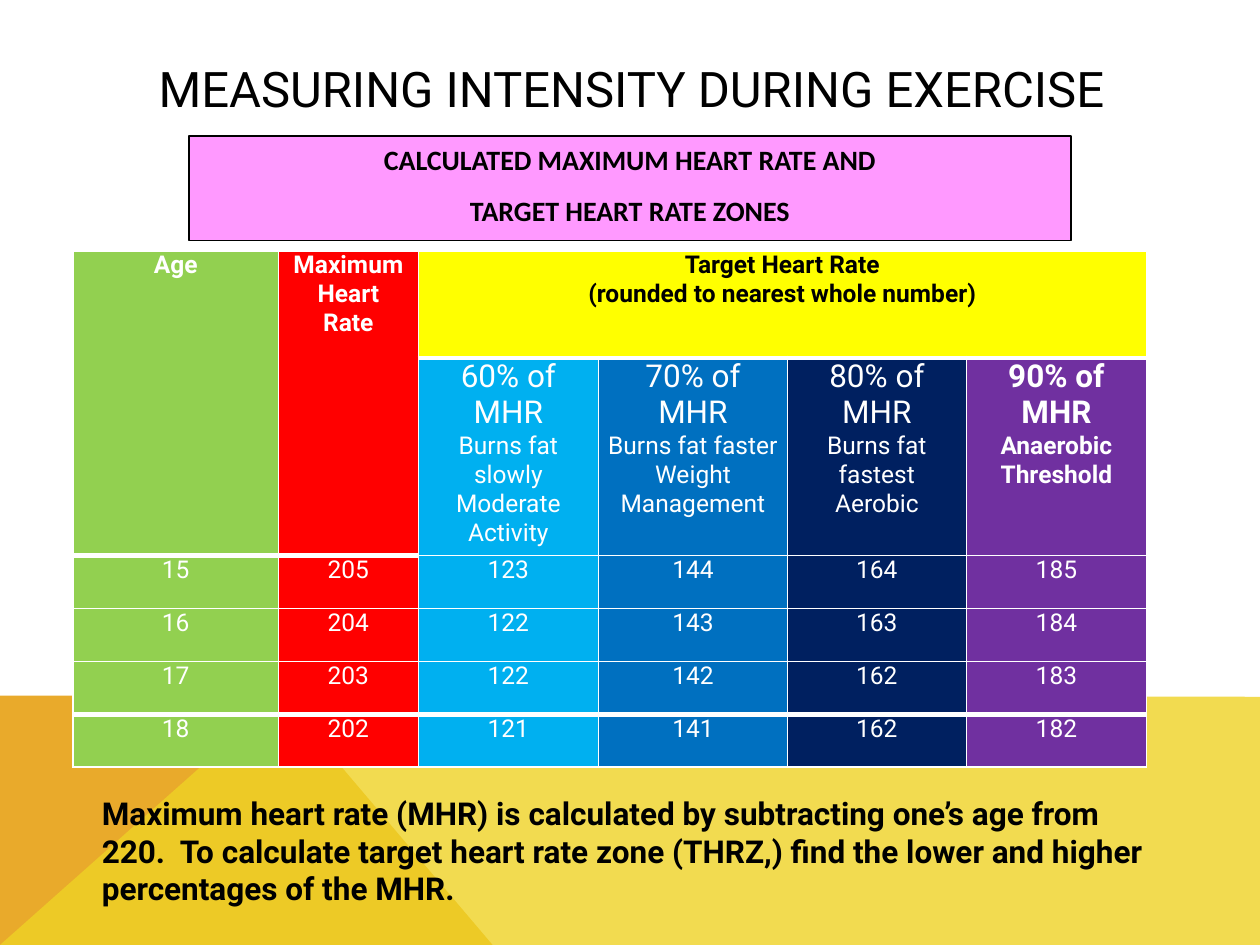
from lxml import etree
from pptx import Presentation
from pptx.dml.color import RGBColor
from pptx.enum import shapes, text
from pptx.oxml import ns
from pptx.util import Inches, Pt

COLORS = {
    "black": "000000", "white": "FFFFFF", "pink": "FF99FF", "orange": "E9AA2B", "gold": "EFD225",
    "green": "92D050", "red": "FF0000", "yellow": "FFFF00", "sky": "00B0F0",
    "blue": "0070C0", "navy": "002060", "purple": "7030A0",
}
CENTER = text.PP_ALIGN.CENTER

COLUMN_COLORS = ["green", "red", "sky", "blue", "navy", "purple"]
COLUMN_WIDTHS = [1.63, 1.11, 1.43, 1.5, 1.42, 1.43]
ROW_HEIGHTS = [0.85, 1.57] + [0.42] * 4
ZONES = [
    ["60% of MHR", "Burns fat slowly Moderate Activity"],
    ["70% of MHR", "Burns fat faster", "Weight Management"],
    ["80% of MHR", "Burns fat fastest", "Aerobic"],
    ["90% of MHR", "Anaerobic", "Threshold"],
]
HEART_RATES = [
    [15, 205, 123, 144, 164, 185],
    [16, 204, 122, 143, 163, 184],
    [17, 203, 122, 142, 162, 183],
    [18, 202, 121, 141, 162, 182],
]


def rgb(name):
    return RGBColor.from_string(COLORS[name])


def has_heavy_bottom(row, column):
    """Tell whether the thick rule runs below this cell."""
    return row == 4 or (row == 0 and column >= 2) or (row == 1 and column < 2)


class SlideBuilder:
    def __init__(self, deck, font="Roboto"):
        self.page = deck.slides.add_slide(deck.slide_layouts[5])
        self.font = font

    def add_lines(self, frame, lines, sizes, color="black", bold=False, align=None, font=None,
                  after=0):
        """Fill a text frame; the last size also serves all further lines."""
        frame.word_wrap = True
        for index, line in enumerate(lines):
            para = frame.add_paragraph() if index else frame.paragraphs[0]
            para.alignment = align
            para.space_before, para.space_after = Pt(0), Pt(after)
            span = para.add_run()
            span.text = line
            span.font.name = font or self.font
            span.font.size = Pt(sizes[min(index, len(sizes) - 1)])
            span.font.bold = bold
            span.font.color.rgb = rgb(color)

    def title(self, line, place):
        box = self.page.shapes.title
        box.left, box.top, box.width, box.height = map(Inches, place)
        box.text_frame.vertical_anchor = text.MSO_ANCHOR.MIDDLE
        self.add_lines(box.text_frame, [line], [28], align=CENTER)

    def polygon(self, points, color, opacity=None):
        corners = [(Inches(x), Inches(y)) for x, y in points]
        builder = self.page.shapes.build_freeform(*corners[0])
        builder.add_line_segments(corners[1:], close=True)
        shape = builder.convert_to_shape()
        shape.shadow.inherit = False
        shape.fill.solid()
        shape.fill.fore_color.rgb = rgb(color)
        shape.line.fill.background()
        if opacity is not None:
            tint = shape.element.spPr.find(".//" + ns.qn("a:srgbClr"))
            etree.SubElement(tint, ns.qn("a:alpha"), val=str(opacity * 1000))

    def banner(self, lines, place, color):
        box = self.page.shapes.add_shape(shapes.MSO_SHAPE.RECTANGLE, *map(Inches, place))
        box.shadow.inherit = False
        box.fill.solid()
        box.fill.fore_color.rgb = rgb(color)
        box.line.color.rgb = rgb("black")
        box.line.width = Pt(0.75)
        box.text_frame.vertical_anchor = text.MSO_ANCHOR.TOP
        self.add_lines(box.text_frame, lines, [16], bold=True, align=CENTER, font="Calibri",
                       after=10)

    def note(self, line, place):
        box = self.page.shapes.add_textbox(*map(Inches, place))
        self.add_lines(box.text_frame, [line], [18], bold=True)

    def table(self, place, widths, heights):
        frame = self.page.shapes.add_table(len(heights), len(widths), *map(Inches, place))
        grid = frame.table
        for column, width in zip(grid.columns, widths):
            column.width = Inches(width)
        for row, height in zip(grid.rows, heights):
            row.height = Inches(height)
        for r in range(len(heights)):
            for c in range(len(widths)):
                top = 3 if has_heavy_bottom(r - 1, c) else 1
                bottom = 3 if has_heavy_bottom(r, c) else 1
                self.borders(grid.cell(r, c), {"L": 1, "R": 1, "T": top, "B": bottom})
        return grid

    def borders(self, cell, weights):
        properties = cell._tc.get_or_add_tcPr()
        for side, weight in weights.items():
            edge = etree.SubElement(properties, ns.qn("a:ln" + side), w=str(Pt(weight)))
            fill = etree.SubElement(edge, ns.qn("a:solidFill"))
            etree.SubElement(fill, ns.qn("a:srgbClr"), val=COLORS["white"])

    def cell(self, cell, lines, fill, sizes=(14,), color="white", bold=False):
        cell.margin_left = cell.margin_right = Inches(0.07)
        cell.margin_top = cell.margin_bottom = 0
        cell.fill.solid()
        cell.fill.fore_color.rgb = rgb(fill)
        self.add_lines(cell.text_frame, lines, sizes, color, bold, CENTER)


def add_heart_rate_table(slide):
    grid = slide.table((0.58, 1.99, 8.52, 4.12), COLUMN_WIDTHS, ROW_HEIGHTS)
    for column, lines in enumerate([["Age"], ["Maximum", "Heart", "Rate"]]):
        grid.cell(0, column).merge(grid.cell(1, column))
        slide.cell(grid.cell(0, column), lines, COLUMN_COLORS[column], bold=True)
    grid.cell(0, 2).merge(grid.cell(0, 5))
    slide.cell(grid.cell(0, 2), ["Target Heart Rate", "(rounded to nearest whole number)"],
               "yellow", color="black", bold=True)
    for column, lines in enumerate(ZONES, start=2):
        slide.cell(grid.cell(1, column), lines, COLUMN_COLORS[column], (18, 14), bold=column == 5)
    for row, rates in enumerate(HEART_RATES, start=2):
        for column, rate in enumerate(rates):
            slide.cell(grid.cell(row, column), [str(rate)], COLUMN_COLORS[column])


def main():
    deck = Presentation()
    deck.slide_width, deck.slide_height = Inches(10), Inches(7.5)
    slide = SlideBuilder(deck)
    slide.polygon([(0, 7.5), (0, 5.52), (2.23, 5.52), (3.91, 7.5)], "orange")
    slide.polygon([(0, 7.5), (2.23, 5.52), (10, 5.53), (10, 7.5)], "gold", opacity=80)
    slide.title("MEASURING INTENSITY DURING EXERCISE", (0.9, 0.4, 8.22, 0.6))
    slide.banner(["CALCULATED MAXIMUM HEART RATE AND", "TARGET HEART RATE ZONES"],
                 (1.5, 1.08, 7, 0.83), "pink")
    add_heart_rate_table(slide)
    slide.note("Maximum heart rate (MHR) is calculated by subtracting one’s age from 220.  "
               "To calculate target heart rate zone (THRZ,) find the lower and higher "
               "percentages of the MHR.", (0.71, 6.25, 8.58, 1.01))
    deck.save("out.pptx")


if __name__ == "__main__":
    main()
